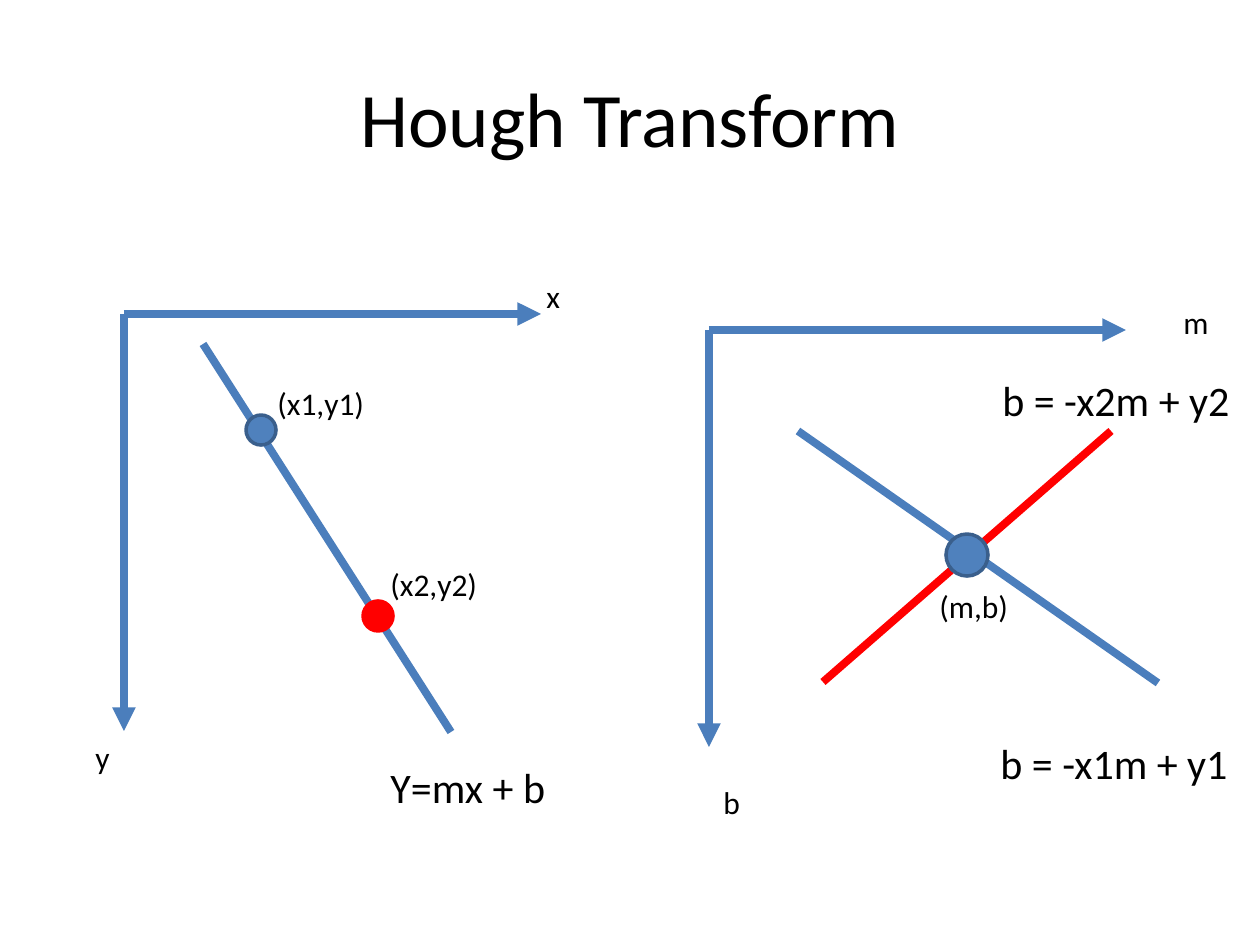
import pptx
import pptx.util
import pptx.dml.color
import pptx.enum.shapes
import pptx.enum.text
import pptx.oxml
import pptx.oxml.ns

EMU_PER_PX = 914400 / 126
FONT = "Calibri"
BLACK, RED = "000000", "FF0000"
LINE_BLUE, DOT_BLUE, DOT_EDGE = "4B7EBC", "4F81BD", "3A5F8C"
AXIS_LENGTH = 417


def px(*values):
    return [pptx.util.Emu(round(v * EMU_PER_PX)) for v in values]


def color(hex_string):
    return pptx.dml.color.RGBColor.from_string(hex_string)


class Diagram:
    """Holds the current slide and the style of its elements."""

    def __init__(self, slide):
        self.slide = slide
        self.shapes = slide.shapes

    def format_text(self, tf, text, size):
        tf.text = text
        font = tf.paragraphs[0].runs[0].font
        font.name, font.size = FONT, pptx.util.Pt(size)
        font.color.rgb = color(BLACK)

    def title(self, text, left, top, width, height):
        sp = self.shapes.title
        sp.left, sp.top, sp.width, sp.height = px(left, top, width, height)
        tf = sp.text_frame
        self.format_text(tf, text, 44)
        tf.vertical_anchor = pptx.enum.text.MSO_ANCHOR.MIDDLE
        tf.paragraphs[0].alignment = pptx.enum.text.PP_ALIGN.CENTER

    def label(self, text, left, top, width, height=50, size=18):
        sp = self.shapes.add_textbox(*px(left, top, width, height))
        tf = sp.text_frame
        tf.word_wrap = False
        tf.auto_size = pptx.enum.text.MSO_AUTO_SIZE.SHAPE_TO_FIT_TEXT
        self.format_text(tf, text, size)

    def equation(self, text, left, top, width):
        self.label(text, left, top, width, 63, 24)

    def line(self, x1, y1, x2, y2, hex_string=LINE_BLUE, arrow=False):
        straight = pptx.enum.shapes.MSO_CONNECTOR.STRAIGHT
        cxn = self.shapes.add_connector(straight, *px(x1, y1, x2, y2))
        cxn.line.color.rgb = color(hex_string)
        cxn.line.width = pptx.util.Pt(4.5)
        if arrow:
            ln = cxn.line._get_or_add_ln()
            tail = pptx.oxml.parse_xml(
                f'<a:tailEnd {pptx.oxml.ns.nsdecls("a")} type="triangle"/>')
            ln.append(tail)
        effects = pptx.oxml.parse_xml(
            f'<a:effectLst {pptx.oxml.ns.nsdecls("a")}/>')
        cxn._element.spPr.append(effects)

    def axes(self, x, y):
        """Draw a rightward and a downward arrow from one origin."""
        self.line(x, y, x + AXIS_LENGTH, y, arrow=True)
        self.line(x, y, x, y + AXIS_LENGTH, arrow=True)

    def dot(self, cx, cy, diameter, fill=DOT_BLUE, edge=DOT_EDGE):
        r = diameter / 2
        oval = pptx.enum.shapes.MSO_SHAPE.OVAL
        sp = self.shapes.add_shape(
            oval, *px(cx - r, cy - r, diameter, diameter))
        sp.shadow.inherit = False
        sp.fill.solid()
        sp.fill.fore_color.rgb = color(fill)
        sp.line.color.rgb = color(edge)
        sp.line.width = pptx.util.Pt(2)


def main():
    prs = pptx.Presentation()
    prs.slide_width, prs.slide_height = px(1260, 945)
    d = Diagram(prs.slides.add_slide(prs.slide_layouts[5]))
    d.title("Hough Transform", 63, 38, 1134, 157)

    # Image space
    d.axes(124, 314)
    d.label("x", 534, 271, 39)
    d.label("y", 83, 732, 40)
    d.line(203, 344, 451, 732)
    d.dot(261, 430, 30)
    d.dot(378, 616, 30, RED, RED)
    d.label("(x1,y1)", 265, 378, 113)
    d.label("(x2,y2)", 378, 559, 113)
    d.equation("Y=mx + b", 378, 755, 181)

    # Parameter space
    d.axes(709, 330)
    d.label("m", 1171, 297, 50)
    d.label("b", 711, 777, 43)
    d.line(798, 431, 1158, 683)
    d.line(823, 682, 1111, 431, RED)
    d.equation("b = -x1m + y1", 988, 731, 255)
    d.equation("b = -x2m + y2", 990, 368, 255)
    d.dot(967, 555, 42)
    d.label("(m,b)", 927, 581, 95)

    prs.save("out.pptx")


if __name__ == "__main__":
    main()
